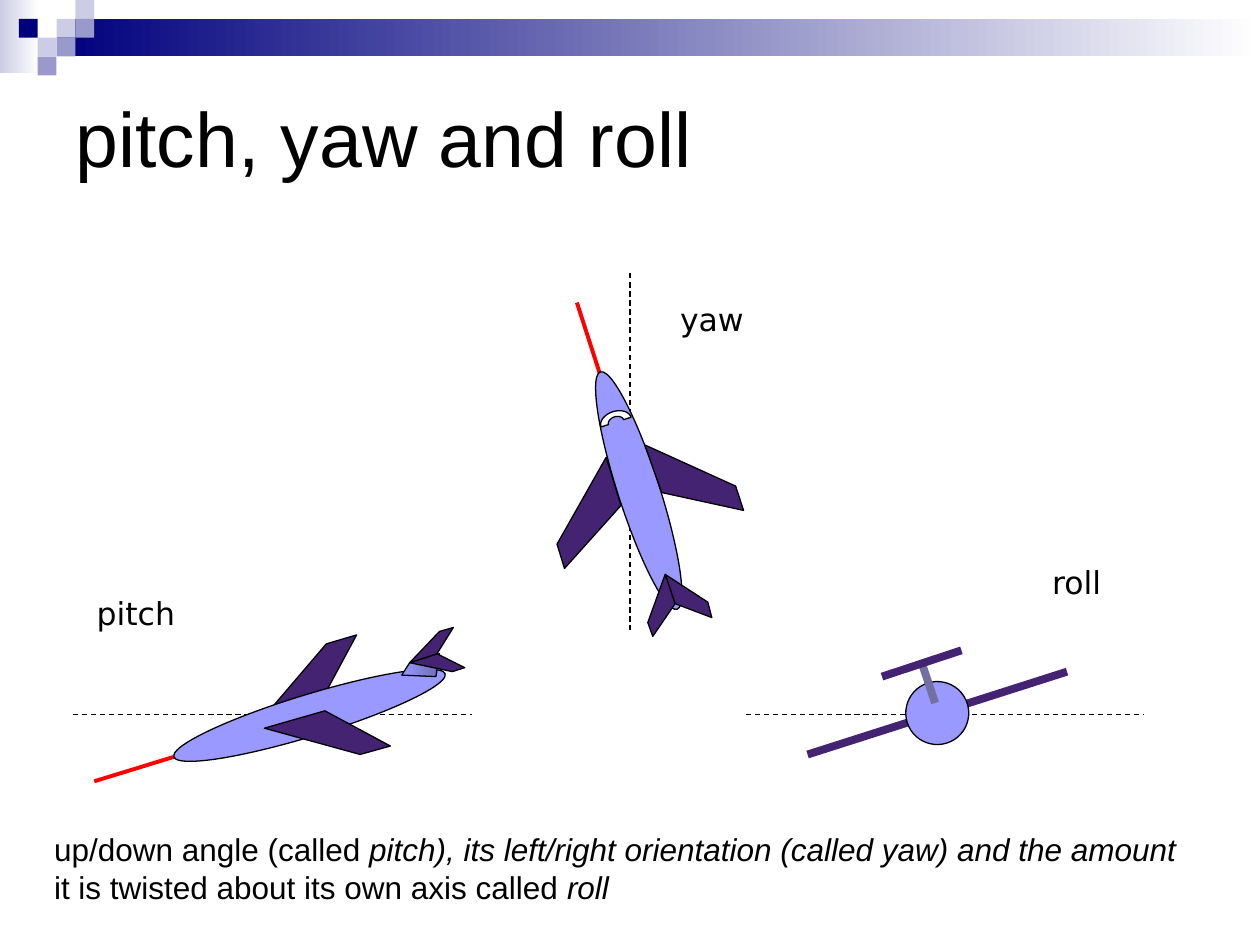
from dataclasses import dataclass
from math import cos, pi, radians, sin

from lxml.etree import SubElement
from pptx import Presentation
from pptx.dml.color import RGBColor
from pptx.enum.dml import MSO_LINE
from pptx.enum.shapes import MSO_CONNECTOR, MSO_SHAPE
from pptx.enum.text import MSO_ANCHOR, MSO_AUTO_SIZE, PP_ALIGN
from pptx.oxml.ns import qn
from pptx.util import Cm, Pt

BLACK = RGBColor(0x00, 0x00, 0x00)
WHITE = RGBColor(0xFF, 0xFF, 0xFF)
RED = RGBColor(0xFF, 0x00, 0x00)
NAVY = RGBColor(0x00, 0x00, 0x7D)
PALE = RGBColor(0xCC, 0xCC, 0xE6)
LAVENDER = RGBColor(0x99, 0x99, 0xCC)
BODY = RGBColor(0x99, 0x99, 0xFF)
BODY_SHADE = RGBColor(0x6D, 0x6D, 0xB6)
WING = RGBColor(0x45, 0x23, 0x73)
FIN = RGBColor(0x73, 0x70, 0xA1)

SQUARE = 0.38
HORIZON = 14.4


@dataclass
class Line:
    start: tuple[float, float]
    end: tuple[float, float]
    color: RGBColor = BLACK
    width: float = 0.75
    dashed: bool = False


@dataclass
class Panel:
    points: list[tuple[float, float]]
    colors: tuple[RGBColor, ...] = (WING,)


@dataclass
class Shape:
    left: float
    top: float
    width: float
    height: float
    colors: tuple[RGBColor, ...] = (BODY,)
    rotation: float = 0
    kind: MSO_SHAPE = MSO_SHAPE.OVAL


@dataclass
class Label:
    left: float
    top: float
    width: float
    height: float
    lines: list[list[tuple[str, bool]]]
    font: str = "DejaVu Sans"


def paint(shape, colors: tuple[RGBColor, ...], outlined: bool) -> None:
    """Fill with one colour, or with a left-to-right gradient of two."""
    shape.shadow.inherit = False
    if len(colors) == 1:
        shape.fill.solid()
        shape.fill.fore_color.rgb = colors[0]
    else:
        shape.fill.gradient()
        shape.fill.gradient_angle = 0
        for stop, color in zip(shape.fill.gradient_stops, colors):
            stop.color.rgb = color
    if outlined:
        shape.line.color.rgb = BLACK
        shape.line.width = Pt(0.75)
    else:
        shape.line.fill.background()


def draw_line(shapes, line: Line) -> None:
    connector = shapes.add_connector(
        MSO_CONNECTOR.STRAIGHT, *(Cm(value) for value in line.start + line.end))
    connector.line.color.rgb = line.color
    connector.line.width = Pt(line.width)
    if line.dashed:
        connector.line.dash_style = MSO_LINE.DASH
    SubElement(connector._element.spPr, qn("a:effectLst"))


def draw_panel(shapes, panel: Panel) -> None:
    first, *others = [(Cm(x), Cm(y)) for x, y in panel.points]
    builder = shapes.build_freeform(*first)
    builder.add_line_segments(others, close=True)
    paint(builder.convert_to_shape(), panel.colors, outlined=True)


def draw_shape(shapes, item: Shape) -> None:
    shape = shapes.add_shape(item.kind, Cm(item.left), Cm(item.top),
                             Cm(item.width), Cm(item.height))
    shape.rotation = item.rotation
    paint(shape, item.colors, outlined=item.kind == MSO_SHAPE.OVAL)


def add_run(paragraph, text: str, font: str, size: float, italic: bool = False) -> None:
    run = paragraph.add_run()
    run.text = text
    run.font.name = font
    run.font.size = Pt(size)
    run.font.italic = italic
    run.font.color.rgb = BLACK


def draw_label(shapes, label: Label) -> None:
    box = shapes.add_textbox(Cm(label.left), Cm(label.top), Cm(label.width), Cm(label.height))
    frame = box.text_frame
    frame.word_wrap = False
    frame.auto_size = MSO_AUTO_SIZE.SHAPE_TO_FIT_TEXT
    for index, line in enumerate(label.lines):
        paragraph = frame.add_paragraph() if index else frame.paragraphs[0]
        for text, italic in line:
            add_run(paragraph, text, label.font, 18, italic)


def draw_group(shapes, parts: list) -> None:
    group = shapes.add_group_shape()
    draw = {Line: draw_line, Panel: draw_panel, Shape: draw_shape}
    for part in parts:
        draw[type(part)](group.shapes, part)


def cockpit_points(x: float, y: float, tilt: float) -> list[tuple[float, float]]:
    """Half ring: outer arc there, inner arc of half the size back."""
    angles = [pi * step / 16 for step in range(17)]
    ring = [(0.32 * cos(a), -0.22 * sin(a)) for a in angles]
    ring += [(0.16 * cos(a), -0.11 * sin(a)) for a in reversed(angles)]
    c, s = cos(radians(tilt)), sin(radians(tilt))
    return [(x + u * c - v * s, y + u * s + v * c) for u, v in ring]


BANNER = [
    Shape(0, 0, 0.79, 1.47, (PALE, WHITE), kind=MSO_SHAPE.RECTANGLE),
    Shape(1.14, 0.38, 24.26, 0.76, (NAVY, WHITE), kind=MSO_SHAPE.RECTANGLE),
] + [
    Shape(column * SQUARE, row * SQUARE, SQUARE, SQUARE, (color,), kind=MSO_SHAPE.RECTANGLE)
    for column, row, color in [(3, 1, PALE), (4, 0, PALE), (4, 1, LAVENDER), (2, 2, PALE),
                               (1, 1, NAVY), (3, 2, LAVENDER), (2, 3, LAVENDER)]
]

AXES = [
    Line((12.7, 5.51), (12.7, 12.7), dashed=True),
    Line((1.47, HORIZON), (9.52, HORIZON), dashed=True),
    Line((15.04, HORIZON), (23.06, HORIZON), dashed=True),
]

PITCH_TAIL = [(8.26, 13.36), (8.81, 13.18)]
PITCH_PLANE = [
    Line((1.9, 15.75), (7.37, 14.07), RED, 2.25),
    Panel([(5.28, 14.5), (6.48, 14.12), (7.19, 12.8), (6.58, 12.98)]),
    Shape(3.38, 14, 5.72, 0.84, rotation=343),
    Panel([(5.33, 14.68), (6.55, 14.33), (7.87, 15.04), (7.26, 15.21)]),
    Panel([(8.1, 13.61), (8.79, 13.64), (8.86, 13.18), (8.26, 13.36)], (BODY, BODY_SHADE)),
    Panel(PITCH_TAIL + [(9.37, 13.46), (9.12, 13.54)]),
    Panel(PITCH_TAIL + [(9.14, 12.65), (8.86, 12.73)]),
]

YAW_TAIL = [(13.41, 11.58), (13.61, 12.17)]
YAW_PLANE = [
    Line((12.8, 9.73), (11.63, 6.1), RED, 2.25),
    Panel([(12.22, 9.22), (12.52, 10.19), (11.38, 11.46), (11.23, 10.97)]),
    Shape(10.36, 9.47, 5.03, 0.84, rotation=72.1),
    Panel([(13, 8.97), (13.34, 9.93), (14.99, 10.29), (14.83, 9.8)]),
    Panel(YAW_TAIL + [(14.35, 12.45), (14.27, 12.14)]),
    Panel(YAW_TAIL + [(13.16, 12.83), (13.06, 12.55)]),
    Panel(cockpit_points(12.42, 8.51, -17.9), (WHITE,)),
]

ROLL_PLANE = [
    Line((16.28, 15.21), (21.51, 13.54), WING, 4.5),
    Shape(18.26, 13.74, 1.27, 1.27, rotation=342.3),
    Line((18.59, 13.39), (18.85, 14.17), FIN, 4.5),
    Line((17.78, 13.64), (19.38, 13.11), WING, 4.5),
]

LABELS = [
    Label(1.7, 11.86, 2.59, 1.3, [[("pitch", False)]]),
    Label(13.46, 5.92, 2.21, 1.3, [[("yaw", False)]]),
    Label(20.96, 11.23, 1.85, 1.3, [[("roll", False)]]),
    Label(0.84, 16.61, 23.34, 1.8, [
        [("up/down angle (called ", False),
         ("pitch), its left/right orientation (called yaw) and the amount", True)],
        [("it is twisted about its own axis called ", False), ("roll", True)],
    ], "Arial"),
]


def main() -> None:
    presentation = Presentation()
    presentation.slide_width, presentation.slide_height = Cm(25.4), Cm(19.05)
    slide = presentation.slides.add_slide(presentation.slide_layouts[5])

    # Title
    title = slide.shapes.title
    title.left, title.top, title.width, title.height = Cm(1.27), Cm(1.27), Cm(22.86), Cm(2.97)
    title.text_frame.vertical_anchor = MSO_ANCHOR.MIDDLE
    paragraph = title.text_frame.paragraphs[0]
    paragraph.alignment = PP_ALIGN.LEFT
    add_run(paragraph, "pitch, yaw and roll", "Arial", 44)

    # Banner, reference axes and the three aircraft
    for parts in (BANNER, AXES, PITCH_PLANE, YAW_PLANE, ROLL_PLANE):
        draw_group(slide.shapes, parts)

    # Labels and caption
    for label in LABELS:
        draw_label(slide.shapes, label)

    presentation.save("out.pptx")


if __name__ == "__main__":
    main()
